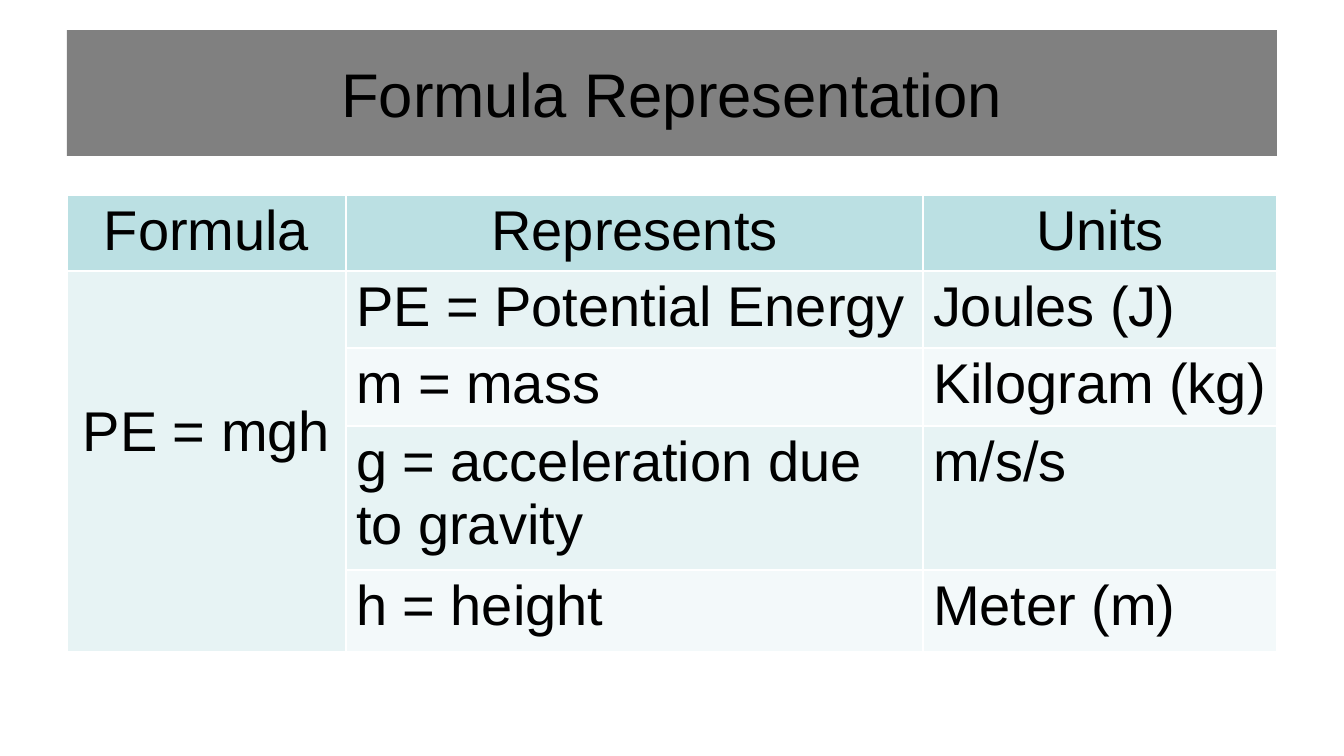
"""Build the Formula Representation slide with its table of terms and units."""
from dataclasses import dataclass

from lxml import etree
from pptx import Presentation
from pptx.dml.color import RGBColor
from pptx.enum.text import MSO_ANCHOR, PP_ALIGN
from pptx.oxml.ns import qn
from pptx.util import Emu, Pt

EMU_PER_PX = 914400 / 100.8
CENTER, LEFT = PP_ALIGN.CENTER, PP_ALIGN.LEFT
TOP, MIDDLE = MSO_ANCHOR.TOP, MSO_ANCHOR.MIDDLE
FONT = "Arial"
BLACK = RGBColor(0x00, 0x00, 0x00)
WHITE = RGBColor(0xFF, 0xFF, 0xFF)
GRAY = RGBColor(0x80, 0x80, 0x80)
HEADER_TEAL = RGBColor(0xBB, 0xE0, 0xE3)
BAND_DARK = RGBColor(0xE7, 0xF3, 0xF4)
BAND_LIGHT = RGBColor(0xF3, 0xF9, 0xFA)
COLUMN_WIDTHS = (279, 577, 354)
ROW_HEIGHTS = (76, 77, 78, 144, 82)
FORMULA_TOP_MARGIN = 130


@dataclass(frozen=True)
class TableRow:
    texts: tuple[str, str, str]
    fill: RGBColor


ROWS = (
    TableRow(("Formula", "Represents", "Units"), HEADER_TEAL),
    TableRow(("PE = mgh", "PE = Potential Energy", "Joules (J)"), BAND_DARK),
    TableRow(("", "m = mass", "Kilogram (kg)"), BAND_LIGHT),
    TableRow(("", "g = acceleration due to gravity", "m/s/s"), BAND_DARK),
    TableRow(("", "h = height", "Meter (m)"), BAND_LIGHT),
)


def px(length: int) -> Emu:
    """Convert whole pixels to EMU."""
    return Emu(round(length * EMU_PER_PX))


def write(frame, text: str, size: int, align) -> None:
    """Write one formatted run into the first paragraph of a text frame."""
    para = frame.paragraphs[0]
    para.alignment = align
    span = para.add_run()
    span.text = text
    span.font.name = FONT
    span.font.size = Pt(size)
    span.font.color.rgb = BLACK


def add_borders(cell) -> None:
    """Give a cell thin white borders on all sides."""
    properties = cell._tc.get_or_add_tcPr()
    for index, side in enumerate(("lnL", "lnR", "lnT", "lnB")):
        line = etree.Element(qn(f"a:{side}"), w=str(Pt(1)))
        fill = etree.SubElement(line, qn("a:solidFill"))
        etree.SubElement(fill, qn("a:srgbClr"), val=str(WHITE))
        properties.insert(index, line)


def add_title(page) -> None:
    """Place and format the title band."""
    title = page.shapes.title
    title.left, title.top, title.width, title.height = map(px, (67, 30, 1210, 126))
    title.fill.solid()
    title.fill.fore_color.rgb = GRAY
    title.text_frame.vertical_anchor = MIDDLE
    write(title.text_frame, "Formula Representation", 44, CENTER)


def add_formula_table(page) -> None:
    """Add the table with the formula cell merged down the first column."""
    frame = page.shapes.add_table(
        len(ROWS), len(COLUMN_WIDTHS), px(67), px(195),
        px(sum(COLUMN_WIDTHS)), px(sum(ROW_HEIGHTS)),
    )
    table = frame.table
    for column, width in zip(table.columns, COLUMN_WIDTHS):
        column.width = px(width)
    for row, height in zip(table.rows, ROW_HEIGHTS):
        row.height = px(height)
    for row_index, row in enumerate(ROWS):
        for column_index, text in enumerate(row.texts):
            cell = table.cell(row_index, column_index)
            cell.fill.solid()
            cell.fill.fore_color.rgb = row.fill
            cell.vertical_anchor = TOP
            add_borders(cell)
            if text:
                centered = row_index == 0 or column_index == 0
                write(cell.text_frame, text, 40, CENTER if centered else LEFT)
    formula = table.cell(1, 0)
    formula.merge(table.cell(len(ROWS) - 1, 0))
    formula.margin_top = px(FORMULA_TOP_MARGIN)


def main() -> None:
    """Build and save the deck."""
    deck = Presentation()
    deck.slide_width, deck.slide_height = px(1344), px(756)
    page = deck.slides.add_slide(deck.slide_layouts[5])
    add_title(page)
    add_formula_table(page)
    deck.save("out.pptx")


if __name__ == "__main__":
    main()
